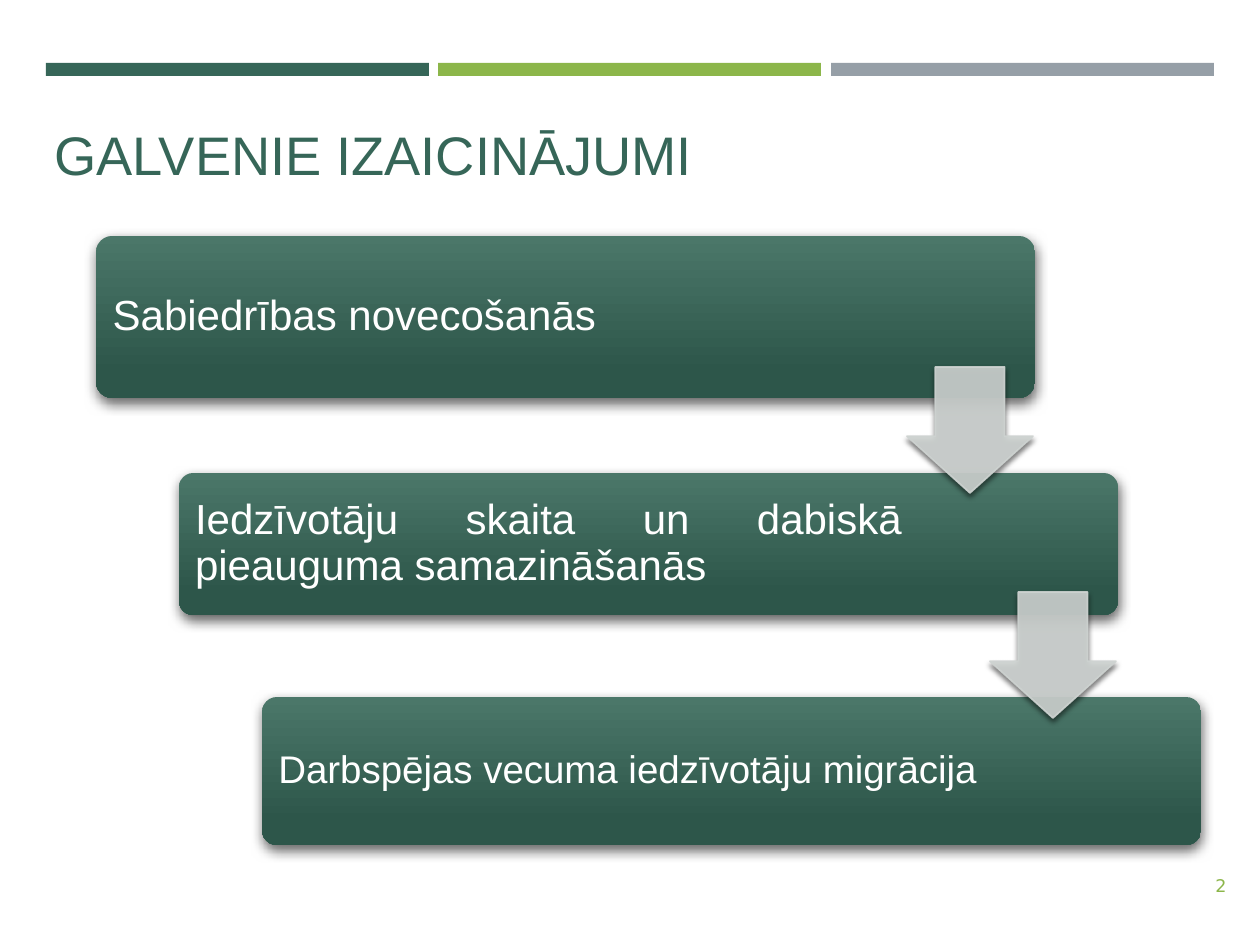
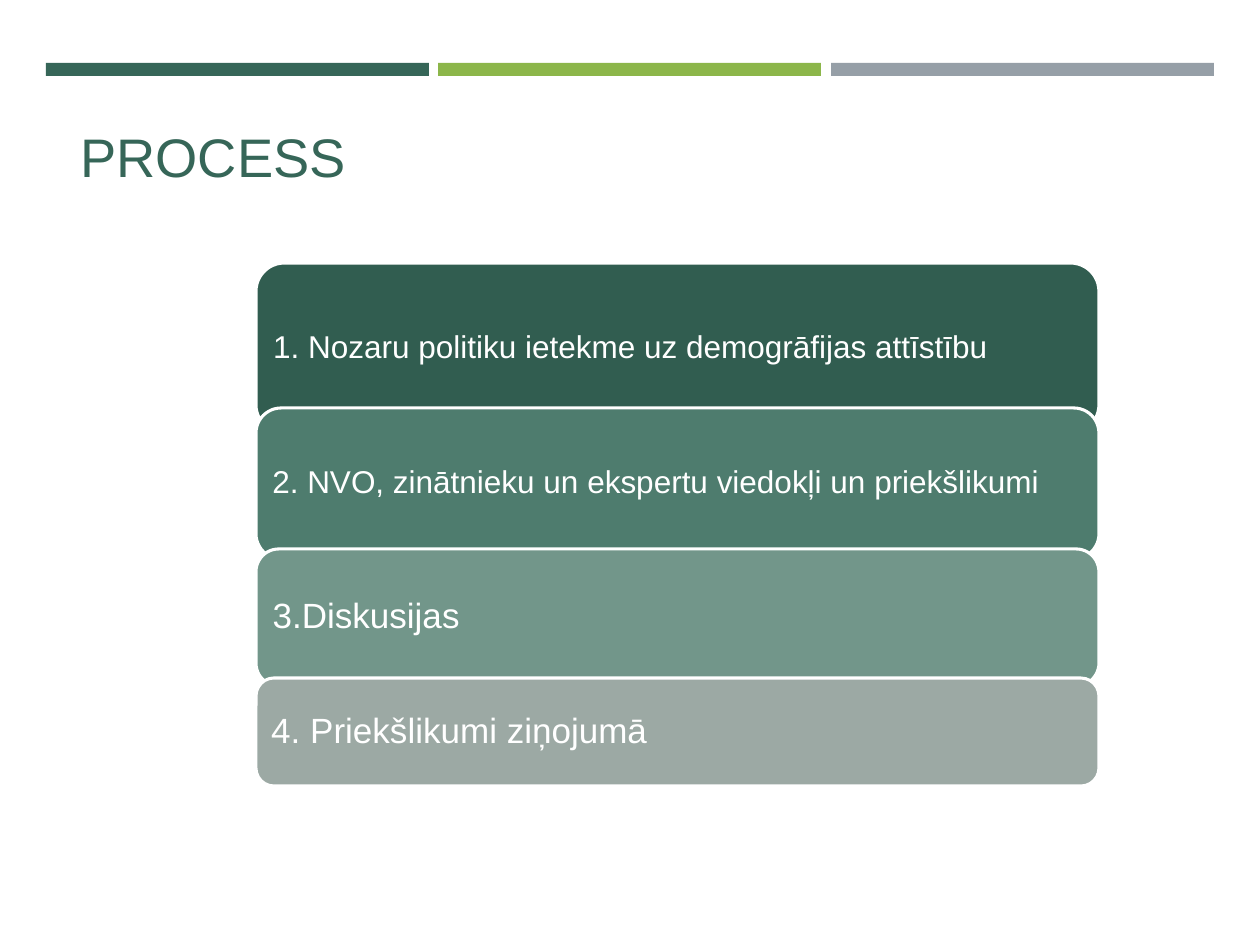
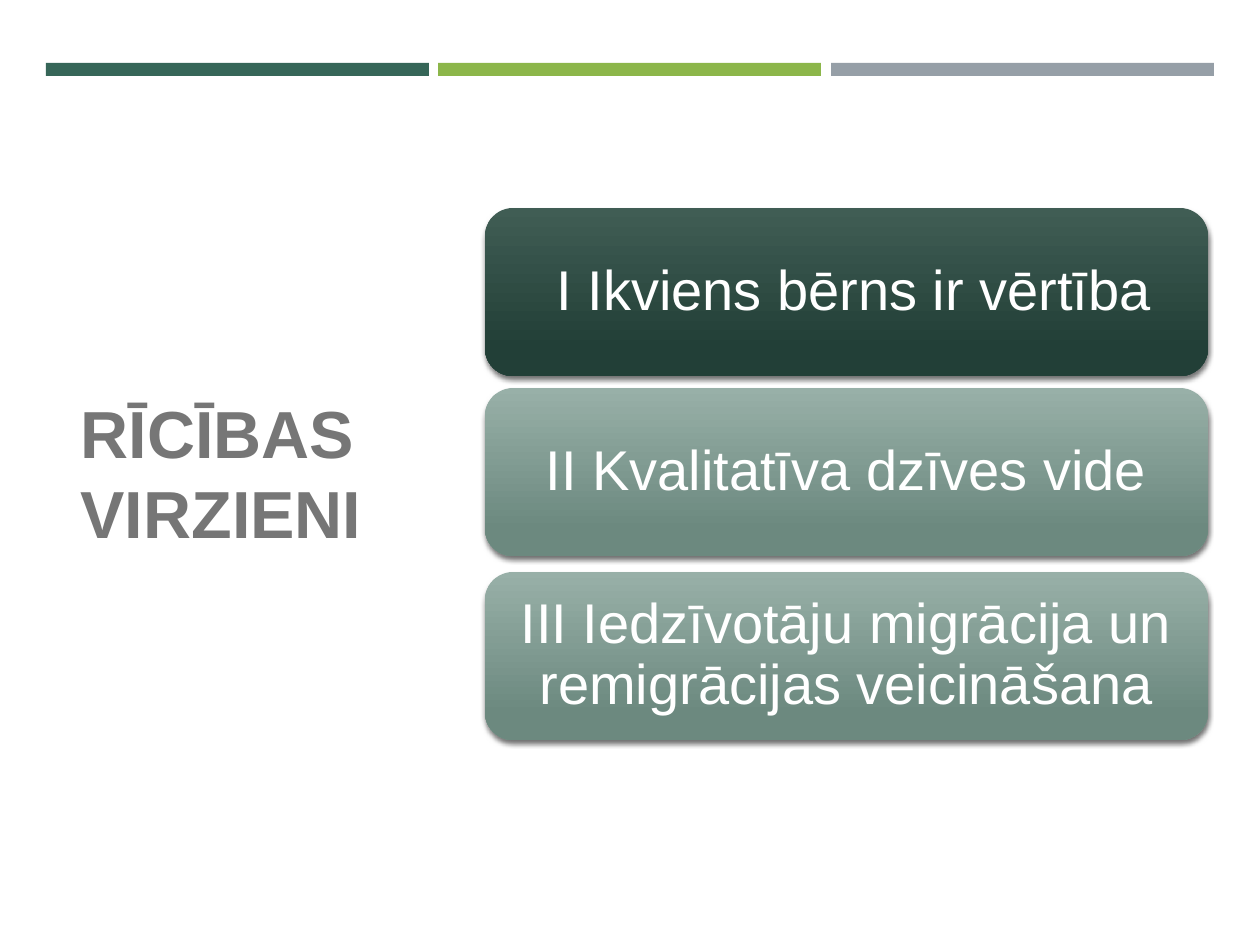
from dataclasses import dataclass
from typing import Optional

from lxml import etree
from pptx import Presentation
from pptx.dml.color import RGBColor
from pptx.enum.shapes import MSO_SHAPE
from pptx.enum.text import MSO_ANCHOR, MSO_AUTO_SIZE, PP_ALIGN
from pptx.oxml.ns import qn
from pptx.util import Emu, Pt

RECT, ROUNDED, DOWN = MSO_SHAPE.RECTANGLE, MSO_SHAPE.ROUNDED_RECTANGLE, MSO_SHAPE.DOWN_ARROW
MIDDLE, BOTTOM = MSO_ANCHOR.MIDDLE, MSO_ANCHOR.BOTTOM
LEFT, CENTER, RIGHT, JUSTIFY = PP_ALIGN.LEFT, PP_ALIGN.CENTER, PP_ALIGN.RIGHT, PP_ALIGN.JUSTIFY
PX = 914400 / 126
TITLE_ONLY = 5


@dataclass(frozen=True)
class Theme:
    font: str = "Arial"
    number_font: str = "DejaVu Sans"
    white: str = "FFFFFF"
    black: str = "000000"
    green: str = "366658"
    lime: str = "8CB64A"
    steel: str = "969FA7"
    gray: str = "767676"
    arrow: str = "CED3D1"
    challenge: tuple = ("4B7769", "2D564A")
    steps: tuple = ("315D50", "4E7C6E", "72968A", "9CA9A4")
    dark: tuple = ("405D54", "223F37")
    pale: tuple = ("98B0A8", "6C897F")
    title_size: int = 31
    side_title_size: int = 38
    number_size: int = 10


THEME = Theme()


@dataclass(frozen=True)
class Box:
    left: int
    top: int
    width: int
    height: int

    def emu(self) -> list:
        return [px(v) for v in (self.left, self.top, self.width, self.height)]


@dataclass(frozen=True)
class Shadow:
    alpha: int
    blur: int
    distance: int
    angle: int


@dataclass(frozen=True)
class Card:
    box: Box
    text: str
    size: int
    fill: tuple
    margin: int
    align: Optional[PP_ALIGN] = JUSTIFY
    right_margin: Optional[int] = None
    corner: Optional[float] = None
    outlined: bool = False
    shadow: Optional[Shadow] = None


DEEP_SHADOW = Shadow(60, 7, 3, 84)
SOFT_SHADOW = Shadow(55, 3, 2, 90)


def px(value: float) -> Emu:
    return Emu(round(value * PX))


def rgb(color: str) -> RGBColor:
    return RGBColor.from_string(color)


def add_shape(s, kind, box: Box, fill: tuple):
    """Shape with a flat fill (one colour) or a vertical gradient (two)."""
    sp = s.shapes.add_shape(kind, *box.emu())
    sp.shadow.inherit = False
    sp.line.fill.background()
    if len(fill) == 1:
        sp.fill.solid()
        sp.fill.fore_color.rgb = rgb(fill[0])
    else:
        sp.fill.gradient()
        sp.fill.gradient_angle = 270
        for stop, color, position in zip(sp.fill.gradient_stops, fill, (0, 0.84)):
            stop.color.rgb = rgb(color)
            stop.position = position
    return sp


def outline(sp, color: str, width: float) -> None:
    sp.line.color.rgb = rgb(color)
    sp.line.width = Pt(width)


def set_alpha(color, percent: int) -> None:
    etree.SubElement(color, qn("a:alpha"), val=str(percent * 1000))


def add_shadow(sp, shadow: Shadow) -> None:
    effects = sp.element.spPr.find(qn("a:effectLst"))
    outer = etree.SubElement(effects, qn("a:outerShdw"), blurRad=str(Pt(shadow.blur)),
                             dist=str(Pt(shadow.distance)), dir=str(shadow.angle * 60000),
                             rotWithShape="0")
    set_alpha(etree.SubElement(outer, qn("a:srgbClr"), val=THEME.black), shadow.alpha)


def write(sp, text: str, size: int, color: str, align, anchor=MIDDLE,
          font: str = THEME.font, bold: bool = False):
    tf = sp.text_frame
    tf.text = text
    tf.word_wrap = True
    tf.auto_size = MSO_AUTO_SIZE.NONE
    tf.vertical_anchor = anchor
    p = tf.paragraphs[0]
    p.alignment = align
    p.font.name, p.font.size, p.font.bold = font, Pt(size), bold
    p.font.color.rgb = rgb(color)
    return tf


def add_card(s, card: Card) -> None:
    sp = add_shape(s, ROUNDED, card.box, card.fill)
    if card.corner is not None:
        sp.adjustments[0] = card.corner
    if card.outlined:
        outline(sp, THEME.white, 1.75)
    if card.shadow:
        add_shadow(sp, card.shadow)
    tf = write(sp, card.text, card.size, THEME.white, card.align)
    tf.margin_left = tf.margin_top = tf.margin_right = tf.margin_bottom = px(card.margin)
    if card.right_margin is not None:
        tf.margin_right = px(card.right_margin)
    tf.paragraphs[0].line_spacing = 0.9


def add_arrow(s, left: int, top: int) -> None:
    sp = add_shape(s, DOWN, Box(left, top, 126, 126), (THEME.arrow,))
    sp.adjustments[0], sp.adjustments[1] = 0.55, 0.45
    outline(sp, THEME.arrow, 1)
    for color in sp.element.spPr.findall(".//" + qn("a:srgbClr")):
        set_alpha(color, 90)
    add_shadow(sp, SOFT_SHADOW)


def new_slide(prs, title: str, box: Box, size: int = THEME.title_size,
              color: str = THEME.green, anchor=BOTTOM, bold: bool = False):
    """Slide with the three top bands and its title."""
    s = prs.slides.add_slide(prs.slide_layouts[TITLE_ONLY])
    for i, band in enumerate((THEME.green, THEME.lime, THEME.steel)):
        add_shape(s, RECT, Box(46 + 785 * i // 2, 63, 383, 13), (band,))
    sp = s.shapes.title
    sp.left, sp.top, sp.width, sp.height = box.emu()
    write(sp, title, size, color, LEFT, anchor, bold=bold)
    return s


def challenges(prs) -> None:
    s = new_slide(prs, "GALVENIE IZAICINĀJUMI", Box(42, 37, 1104, 156))
    number = s.shapes.add_textbox(*Box(1202, 868, 37, 34).emu())
    write(number, "2", THEME.number_size, THEME.lime, RIGHT, font=THEME.number_font)

    # Cards descending to the right
    left, step = 96, 83
    rows = (
        (236, 162, "Sabiedrības novecošanās", 24, JUSTIFY),
        (473, 142, "Iedzīvotāju skaita un dabiskā pieauguma samazināšanās", 24, JUSTIFY),
        (697, 148, "Darbspējas vecuma iedzīvotāju migrācija", 22, LEFT),
    )
    for i, (top, height, text, size, align) in enumerate(rows):
        add_card(s, Card(Box(left + i * step, top, 939, height), text, size, THEME.challenge,
                         margin=12, align=align, right_margin=212, corner=0.1,
                         shadow=DEEP_SHADOW))

    # Arrows from each card to the next
    for i, top in enumerate((367, 592)):
        add_arrow(s, left + 811 + i * step, top)


def process(prs) -> None:
    s = new_slide(prs, "PROCESS", Box(68, 39, 1104, 156))
    rows = (
        (263, 170, "1. Nozaru politiku ietekme uz demogrāfijas attīstību", 18, 9),
        (408, 151, "2. NVO, zinātnieku un ekspertu viedokļi un priekšlikumi", 18, 9),
        (549, 137, "3.Diskusijas", 20, 10),
        (678, 108, "4. Priekšlikumi ziņojumā", 20, 10),
    )
    for (top, height, text, size, margin), color in zip(rows, THEME.steps):
        add_card(s, Card(Box(256, top, 843, height), text, size, (color,), margin,
                         outlined=True))


def directions(prs) -> None:
    s = new_slide(prs, "RĪCĪBAS VIRZIENI", Box(68, 190, 367, 564), THEME.side_title_size,
                  THEME.gray, MIDDLE, bold=True)
    rows = (
        (208, " I Ikviens bērns ir vērtība", THEME.dark),
        (388, "II Kvalitatīva dzīves vide", THEME.pale),
        (572, "III Iedzīvotāju migrācija un remigrācijas veicināšana", THEME.pale),
    )
    for top, text, fill in rows:
        add_card(s, Card(Box(485, top, 723, 168), text, 32, fill, margin=16,
                         align=CENTER, shadow=SOFT_SHADOW))


def main() -> None:
    prs = Presentation()
    prs.slide_width, prs.slide_height = px(1260), px(945)
    challenges(prs)
    process(prs)
    directions(prs)
    prs.save("out.pptx")


if __name__ == "__main__":
    main()
